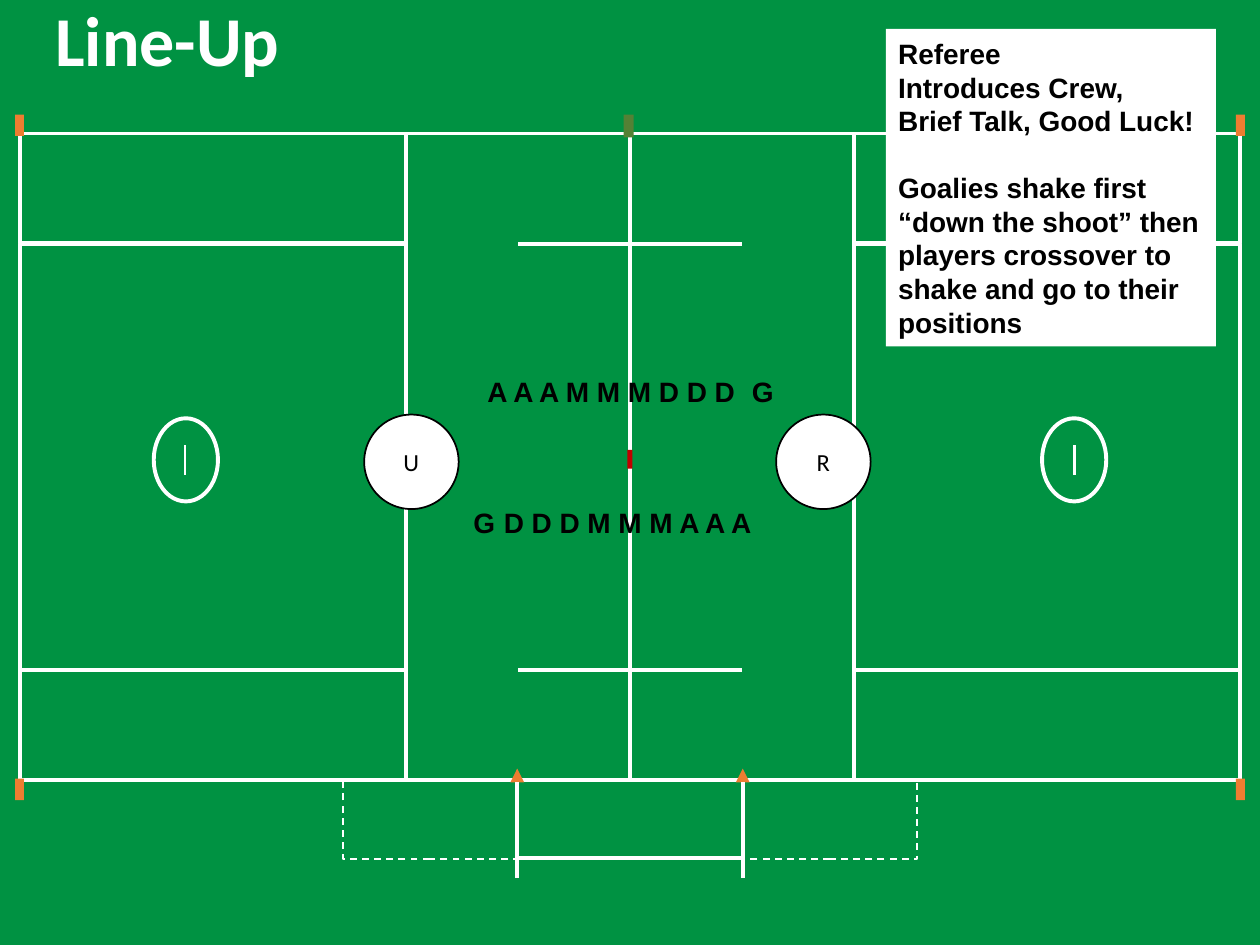
from dataclasses import dataclass

from lxml import etree
from pptx import Presentation
from pptx.dml.color import RGBColor
from pptx.enum.dml import MSO_LINE
from pptx.enum.shapes import MSO_CONNECTOR, MSO_SHAPE
from pptx.enum.text import MSO_ANCHOR, PP_ALIGN
from pptx.oxml.ns import qn
from pptx.util import Inches, Pt

RECT = MSO_SHAPE.RECTANGLE
OVAL = MSO_SHAPE.OVAL
CONE = MSO_SHAPE.ISOSCELES_TRIANGLE
STRAIGHT = MSO_CONNECTOR.STRAIGHT
DASH = MSO_LINE.DASH
MIDDLE = MSO_ANCHOR.MIDDLE
TOP = MSO_ANCHOR.TOP
LEFT = PP_ALIGN.LEFT
CENTER = PP_ALIGN.CENTER

WIDTH, HEIGHT = 10, 7.5


@dataclass(frozen=True)
class Theme:
    grass: str = "009242"
    white: str = "FFFFFF"
    black: str = "000000"
    orange: str = "ED7D31"
    green: str = "548135"
    red: str = "C00000"
    head: str = "Calibri"
    body: str = "Arial"
    large: float = 40
    small: float = 14
    text: float = 16
    thick: float = 2.25
    mid: float = 1.5
    thin: float = 1


class Field:
    def __init__(self, slide, theme):
        self.slide = slide
        self.theme = theme
        back = slide.background.fill
        back.solid()
        back.fore_color.rgb = RGBColor.from_string(theme.grass)

    def stroke(self, line, color, width, dash=None):
        line.color.rgb = RGBColor.from_string(color)
        line.width = Pt(width)
        if dash:
            line.dash_style = dash

    def shape(self, kind, box, fill=None, line=None, width=None, dash=None):
        item = self.slide.shapes.add_shape(kind, *map(Inches, box))
        item.shadow.inherit = False
        if fill:
            item.fill.solid()
            item.fill.fore_color.rgb = RGBColor.from_string(fill)
        else:
            item.fill.background()
        if line:
            self.stroke(item.line, line, width, dash)
        else:
            item.line.fill.background()
        return item

    def outline(self, kind, box):
        return self.shape(kind, box, None, self.theme.white, self.theme.thick)

    def line(self, start, end, width):
        ends = map(Inches, (*start, *end))
        item = self.slide.shapes.add_connector(STRAIGHT, *ends)
        self.stroke(item.line, self.theme.white, width)
        etree.SubElement(item._element.spPr, qn("a:effectLst"))

    def letter(self, item, lines, font, size, color, bold=False,
               anchor=TOP, align=LEFT, gaps=()):
        frame = item.text_frame
        frame.word_wrap = True
        frame.vertical_anchor = anchor
        look = {"name": font, "size": Pt(size), "bold": bold}
        for index, words in enumerate(lines):
            para = frame.paragraphs[0] if index == 0 else frame.add_paragraph()
            para.text = words
            para.alignment = align
            if index in gaps:
                para.space_before = Pt(gaps[index])
            for run in para.runs:
                for name, value in look.items():
                    setattr(run.font, name, value)
                run.font.color.rgb = RGBColor.from_string(color)

    def title(self, box, words):
        item = self.slide.shapes.title
        for name, value in zip(("left", "top", "width", "height"), box):
            setattr(item, name, Inches(value))
        self.letter(item, [words], self.theme.head, self.theme.large,
                    self.theme.white, True, MIDDLE)
        item.text_frame.paragraphs[0].line_spacing = 0.9

    def label(self, box, words):
        item = self.slide.shapes.add_textbox(*map(Inches, box))
        self.letter(item, [words], self.theme.body, self.theme.text,
                    self.theme.black, True)

    def crew(self, box, words):
        theme = self.theme
        item = self.shape(OVAL, box, theme.white, theme.black, theme.thin)
        self.letter(item, [words], theme.head, theme.small, theme.black,
                    anchor=MIDDLE, align=CENTER)

    def note(self, box, lines, gaps):
        theme = self.theme
        item = self.shape(RECT, box, theme.white)
        self.letter(item, lines, theme.body, theme.text, theme.black, True,
                    MIDDLE, gaps=gaps)

    def half(self, right):
        theme = self.theme

        def side(x, y, wide, high):
            return (WIDTH - x - wide if right else x), y, wide, high

        def spot(x, y):
            return (WIDTH - x if right else x), y

        self.outline(RECT, side(3.22, 1.06, 1.78, 5.13))
        for top, high in ((1.06, 0.87), (5.32, 0.87), (1.94, 3.38)):
            self.outline(RECT, side(0.16, top, 3.06, high))
        for top in (0.91, 6.18):
            self.shape(RECT, side(0.12, top, 0.07, 0.17), theme.orange)
        self.shape(RECT, side(2.72, 6.2, 1.38, 0.62), None,
                   theme.white, theme.thin, DASH)
        self.shape(CONE, side(4.05, 6.1, 0.11, 0.11), theme.orange)
        self.outline(OVAL, side(1.22, 3.32, 0.51, 0.66))
        self.line(spot(1.47, 3.77), spot(1.47, 3.53), theme.mid)
        self.line(spot(4.1, 6.97), spot(4.1, 6.21), theme.thick)
        for y in (1.94, 5.32, 6.81):
            self.line(spot(5, y), spot(4.11, y), theme.thick)


def main():
    deck = Presentation()
    deck.slide_width = Inches(WIDTH)
    deck.slide_height = Inches(HEIGHT)
    theme = Theme()
    field = Field(deck.slides.add_slide(deck.slide_layouts[5]), theme)

    for right in (False, True):
        field.half(right)
    field.shape(RECT, (4.95, 0.91, 0.08, 0.18), theme.green)
    field.shape(RECT, (4.98, 3.57, 0.04, 0.15), theme.red)

    field.title((0.34, 0.23, 2.68, 0.24), "Line-Up")
    for left, words in ((2.89, "U"), (6.16, "R")):
        field.crew((left, 3.29, 0.75, 0.75), words)
    field.note(
        (7.03, 0.23, 2.62, 2.52),
        [
            "Referee",
            "Introduces Crew,\vBrief Talk, Good Luck!",
            "Goalies shake first “down the shoot” then players crossover "
            "to shake and go to their positions",
        ],
        {2: 19},
    )
    for left, top, wide, words in (
        (3.77, 2.92, 2.29, "A A A M M M D D D"),
        (5.87, 2.92, 0.36, "G"),
        (3.9, 3.96, 2.35, "D D D M M M A A A"),
        (3.66, 3.96, 0.36, "G"),
    ):
        field.label((left, top, wide, 0.37), words)

    deck.save("out.pptx")


if __name__ == "__main__":
    main()
